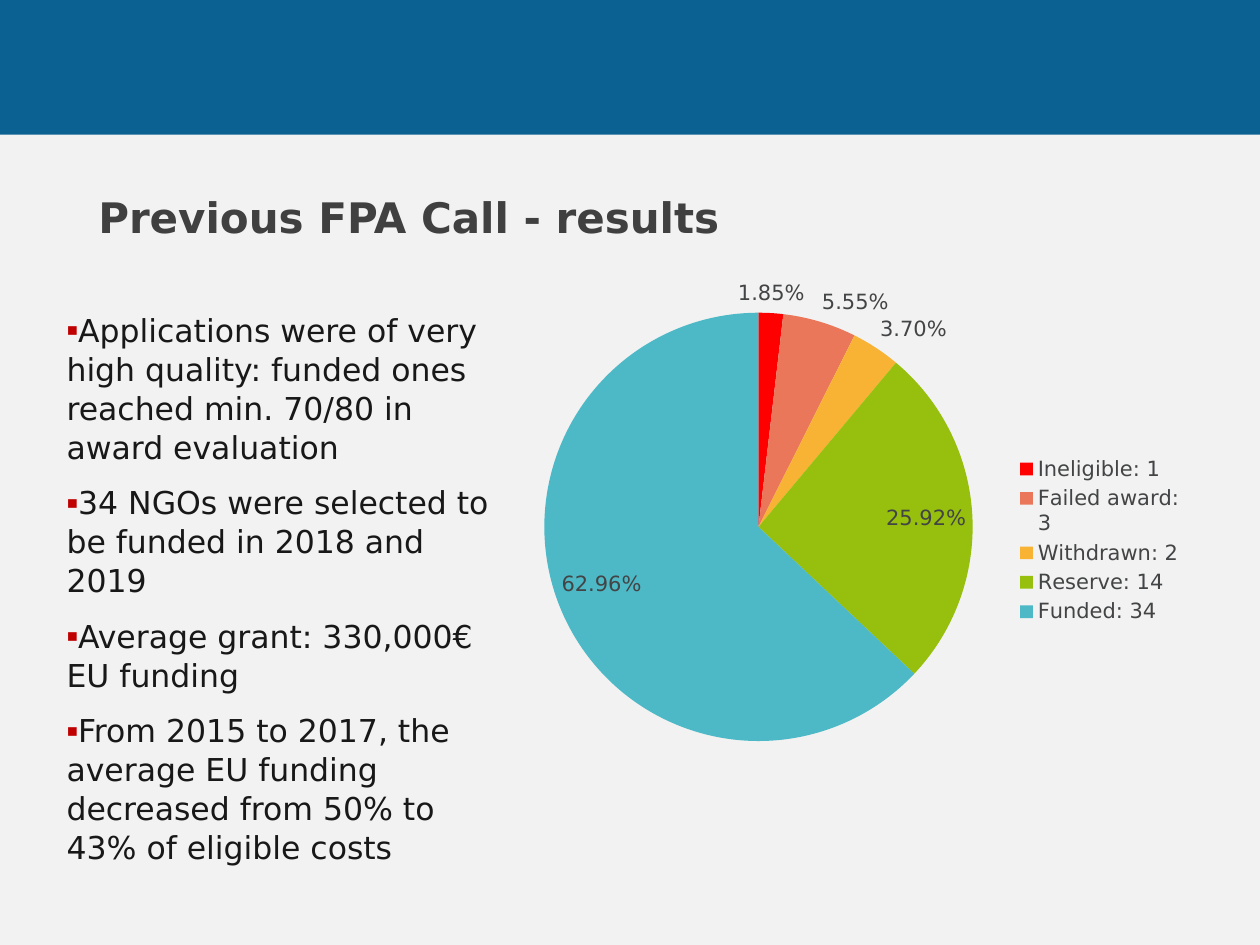
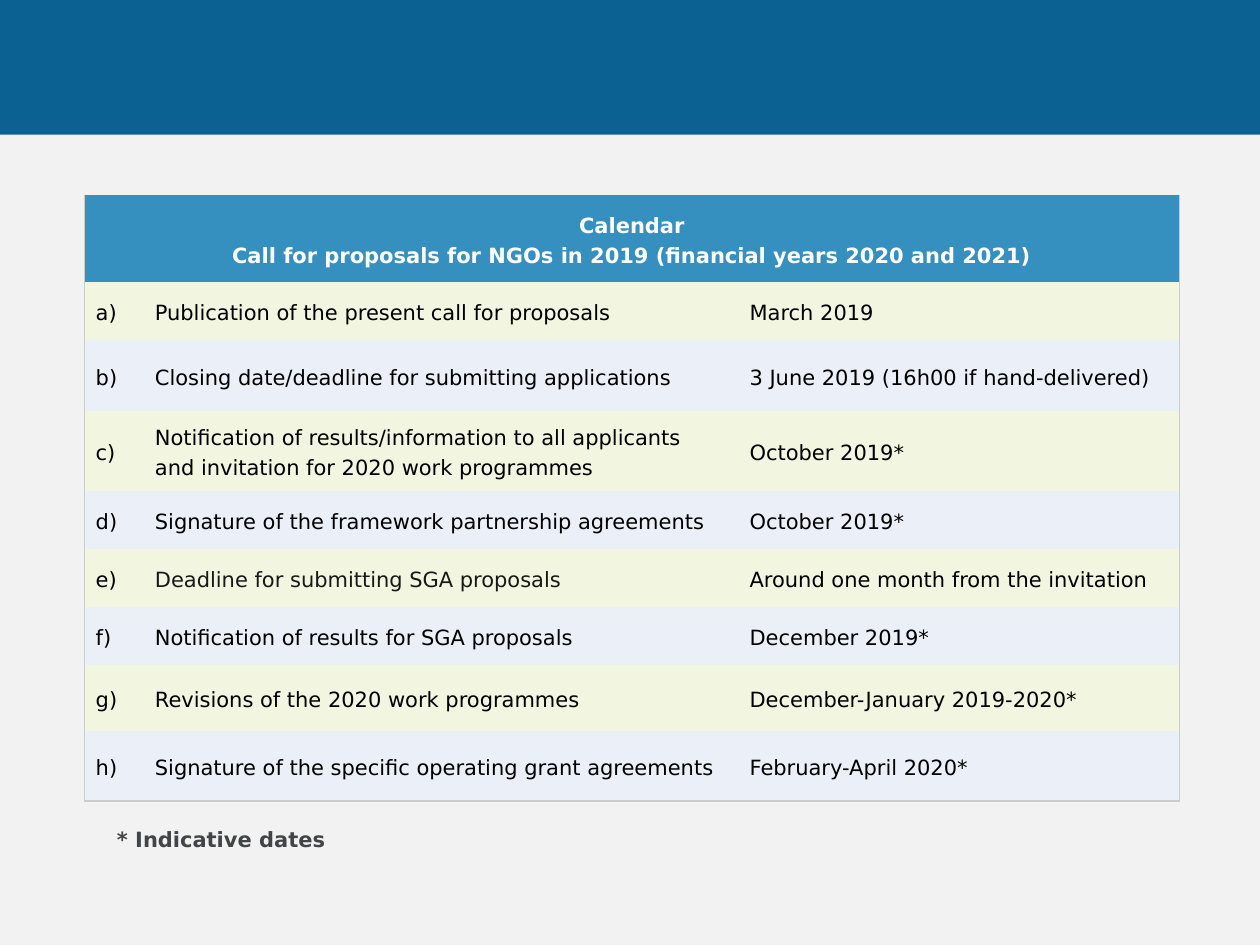
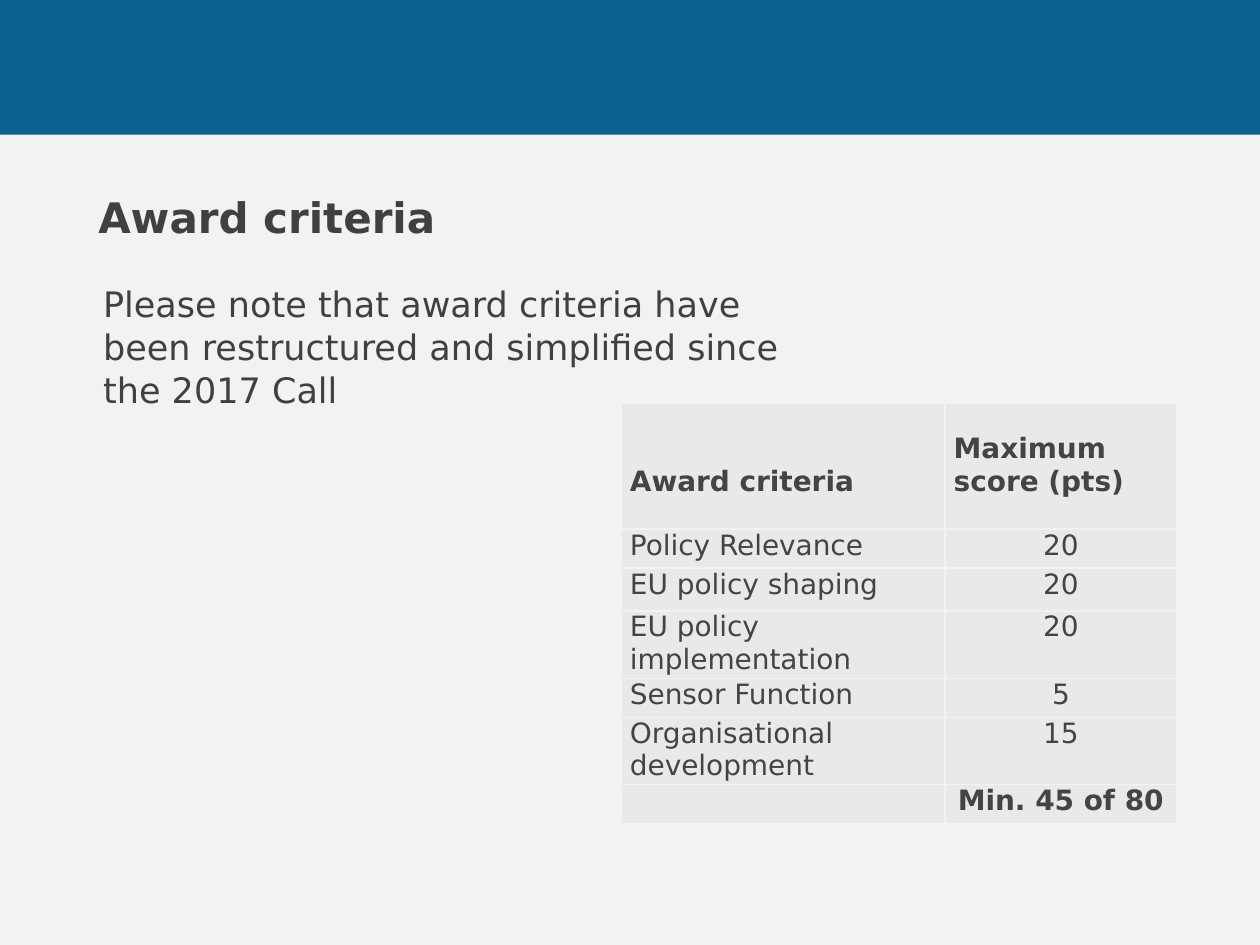
from lxml import etree
from pptx import Presentation
from pptx import util as u
from pptx.chart.data import CategoryChartData
from pptx.dml.color import RGBColor
from pptx.enum import chart as ch, shapes, text
from pptx.oxml import ns

FACE = "DejaVu Sans"
PAPER, BAND, INK, DARK, GREY = "F2F2F2", "0B6192", "404040", "181818", "434445"
HEAD, GREEN, PALE, CELL, EDGE = "3590BF", "F2F5E0", "EBEFF8", "E9E9E9", "CCCCCC"
PLAIN = "{2D5ABB26-0587-4C30-8999-92F81FD0307C}"
LEFT, MID = text.PP_ALIGN.LEFT, text.PP_ALIGN.CENTER
TOP, HALF, BASE = text.MSO_ANCHOR.TOP, text.MSO_ANCHOR.MIDDLE, text.MSO_ANCHOR.BOTTOM


def rgb(code):
    return RGBColor.from_string(code)


def paint(item, code):
    item.fill.solid()
    item.fill.fore_color.rgb = rgb(code)


def add(up, tag, **attrs):
    return etree.SubElement(up, ns.qn(tag), attrs)


def bullet(para, mark, code):
    props = para._p.get_or_add_pPr()
    props.set("marL", "0")
    props.set("indent", "0")
    add(add(props, "a:buClr"), "a:srgbClr", val=code)
    add(props, "a:buSzPct", val="55000")
    add(props, "a:buFont", typeface=FACE)
    add(props, "a:buChar", char=mark)


def write(frame, lines, size=12, code=GREY, bold=False, align=LEFT,
          lead=None, before=0, after=0, mark=None):
    lines = [lines] if isinstance(lines, str) else lines
    for i, line in enumerate(lines):
        para = frame.add_paragraph() if i else frame.paragraphs[0]
        para.text = line
        para.alignment = align
        para.line_spacing = lead
        para.space_before = u.Pt(before if i else 0)
        para.space_after = u.Pt(after)
        if mark:
            bullet(para, mark, "C00000")
        for run in para.runs:
            font = run.font
            font.name, font.size, font.bold = FACE, u.Pt(size), bold
            font.color.rgb = rgb(code)


def border(cell, sides, code):
    props = cell._tc.get_or_add_tcPr()
    for i, side in enumerate(sides):
        line = etree.Element(ns.qn("a:ln" + side), w=str(u.Pt(1)))
        add(add(line, "a:solidFill"), "a:srgbClr", val=code)
        props.insert(i, line)


def place(item, x, y, w, h):
    layout = item.find(ns.qn("c:layout"))
    if layout is None:
        layout = etree.Element(ns.qn("c:layout"))
        item.insert(1 if item.tag == ns.qn("c:legend") else 0, layout)
    for child in list(layout):
        layout.remove(child)
    manual = add(layout, "c:manualLayout")
    if item.tag == ns.qn("c:plotArea"):
        add(manual, "c:layoutTarget", val="inner")
    add(manual, "c:xMode", val="edge")
    add(manual, "c:yMode", val="edge")
    for key, val in zip("xywh", (x, y, w, h)):
        add(manual, "c:" + key, val=str(val))


class Deck:
    def __init__(self):
        self.prs = Presentation()
        self.prs.slide_width = u.Inches(10)
        self.prs.slide_height = u.Inches(7.5)
        paint(self.prs.slide_master.background, PAPER)

    def page(self, title=None):
        layout = self.prs.slide_layouts[5 if title else 6]
        self.slide = self.prs.slides.add_slide(layout)
        self.band()
        if title:
            self.title(title)

    def band(self):
        band = self.slide.shapes.add_shape(
            shapes.MSO_SHAPE.RECTANGLE, 0, 0, u.Inches(10), u.Inches(1.07))
        band.shadow.inherit = False
        paint(band, BAND)
        band.line.fill.background()
        self.slide.shapes._spTree.insert(2, band._element)

    def title(self, words):
        head = self.slide.shapes.title
        head.left, head.top = u.Inches(0.68), u.Inches(1.47)
        head.width, head.height = u.Inches(8.67), u.Inches(1.02)
        frame = head.text_frame
        frame.auto_size = text.MSO_AUTO_SIZE.NONE
        frame.vertical_anchor = TOP
        write(frame, words, size=24, code=INK, bold=True)

    def note(self, x, y, w, h, lines, **style):
        box = self.slide.shapes.add_textbox(*map(u.Inches, (x, y, w, h)))
        box.text_frame.word_wrap = True
        write(box.text_frame, lines, **style)

    def table(self, x, y, cols, rows):
        spot = map(u.Inches, (x, y, sum(cols), sum(rows)))
        grid = self.slide.shapes.add_table(len(rows), len(cols), *spot).table
        grid.first_row = grid.horz_banding = False
        grid._tbl.tblPr.find(ns.qn("a:tableStyleId")).text = PLAIN
        for col, wide in zip(grid.columns, cols):
            col.width = u.Inches(wide)
        for row, high in zip(grid.rows, rows):
            row.height = u.Inches(high)
        return grid

    def cell(self, cell, words, fill, sides, edge, pad, foot=None,
             anchor=TOP, **style):
        cell.margin_left = cell.margin_right = u.Inches(pad[0])
        cell.margin_top = u.Inches(pad[1])
        cell.margin_bottom = u.Inches(pad[1] if foot is None else foot)
        cell.vertical_anchor = anchor
        write(cell.text_frame, words, **style)
        paint(cell, fill)
        border(cell, sides, edge)

    def pie(self, x, y, w, h, parts):
        data = CategoryChartData(number_format="0.00%")
        data.categories = [name for name, _, _ in parts]
        data.add_series("Series 1", [val for _, val, _ in parts])
        chart = self.slide.shapes.add_chart(
            ch.XL_CHART_TYPE.PIE, *map(u.Inches, (x, y, w, h)), data).chart
        chart.has_title = False
        chart.has_legend = True
        legend = chart.legend
        legend.position = ch.XL_LEGEND_POSITION.RIGHT
        legend.include_in_layout = False
        plot = chart.plots[0]
        plot.vary_by_categories = True
        plot.has_data_labels = True
        tags = plot.data_labels
        tags.show_value, tags.show_percentage = True, False
        tags.number_format, tags.number_format_is_linked = "0.00%", False
        tags.position = ch.XL_LABEL_POSITION.BEST_FIT
        for font, size in (chart.font, 10), (legend.font, 12), (tags.font, 12):
            font.name, font.size = FACE, u.Pt(size)
            font.color.rgb = rgb(GREY)
        for i, (_, _, code) in enumerate(parts):
            paint(plot.series[0].points[i].format, code)
        place(chart._chartSpace.chart.plotArea, 0.13, 0.09, 0.54, 0.8)
        place(legend._element, 0.72, 0.35, 0.22, 0.33)


def results(deck):
    deck.page("Previous FPA Call - results")
    deck.note(0.43, 2.41, 3.62, 4.17, [
        "Applications were of very high quality: funded ones reached min. 70/80 in award evaluation",
        "34 NGOs were selected to be funded in 2018 and 2019",
        "Average grant: 330,000€ EU funding",
        "From 2015 to 2017, the average EU funding decreased from 50% to 43% of eligible costs",
    ], size=18, code=DARK, lead=1.03, before=3.6, after=6, mark="▪")
    deck.pie(3.5, 2.1, 6.3, 4.25, [
        ("Ineligible: 1", 0.0185, "FF0000"),
        ("Failed award: 3", 0.0555, "EB775B"),
        ("Withdrawn: 2", 0.037, "F8B334"),
        ("Reserve: 14", 0.2592, "97BF0D"),
        ("Funded: 34", 0.6296, "4DB9C7"),
    ])


def dates(deck):
    deck.page()
    steps = [
        ("Publication of the present call for proposals", "March 2019"),
        ("Closing date/deadline for submitting applications",
         "3 June 2019 (16h00 if hand-delivered)"),
        ("Notification of results/information to all applicants and invitation for 2020 work programmes",
         "October 2019*"),
        ("Signature of the framework partnership agreements", "October 2019*"),
        ("Deadline for submitting SGA proposals", "Around one month from the invitation"),
        ("Notification of results for SGA proposals", "December 2019*"),
        ("Revisions of the 2020 work programmes", "December-January 2019-2020*"),
        ("Signature of the specific operating grant agreements", "February-April 2020*"),
    ]
    grid = deck.table(0.67, 1.55, [0.47, 4.72, 3.5],
                      [0.69, 0.46, 0.56, 0.64, 0.46, 0.46, 0.46, 0.52, 0.56])
    look = dict(edge=EDGE, pad=(0.09, 0.08), anchor=HALF, lead=1.2)
    grid.cell(0, 0).merge(grid.cell(0, 2))
    deck.cell(grid.cell(0, 0),
              "Calendar\vCall for proposals for NGOs in 2019 (financial years 2020 and 2021)",
              HEAD, "LR", code="FFFFFF", bold=True, align=MID, **look)
    for r, (mark, step) in enumerate(zip("abcdefgh", steps), 1):
        base = "B" if r == len(steps) else ""
        for c, words in enumerate((mark + ")", *step)):
            code = DARK if (mark, c) == ("e", 1) else "000000"
            deck.cell(grid.cell(r, c), words, GREEN if r % 2 else PALE,
                      ("L", "", "R")[c] + base, code=code, **look)
    deck.note(0.83, 6.51, 3.78, 0.32, "* Indicative dates", bold=True)


def awards(deck):
    deck.page("Award criteria")
    deck.note(0.72, 2.18, 5.86, 0.79,
              "Please note that award criteria have been restructured and simplified since the 2017 Call",
              size=20, code=INK, lead=1.03)
    rows = [
        ("Award criteria", "Maximum score (pts)"),
        ("Policy Relevance", "20"),
        ("EU policy shaping", "20"),
        ("EU policy implementation", "20"),
        ("Sensor Function", "5"),
        ("Organisational development", "15"),
        ("", "Min. 45 of 80"),
    ]
    grid = deck.table(4.93, 3.2, [2.57, 1.84], [1, 0.31, 0.34, 0.51, 0.31, 0.51, 0.31])
    for r, row in enumerate(rows):
        first = r == 0
        for c, words in enumerate(row):
            deck.cell(grid.cell(r, c), words, CELL, "LRTB", PAPER, (0.07, 0),
                      foot=0.25 if first else 0, anchor=BASE if first else TOP,
                      size=16, bold=r in (0, len(rows) - 1),
                      align=MID if c and not first else LEFT)


def main():
    deck = Deck()
    results(deck)
    dates(deck)
    awards(deck)
    deck.prs.save("out.pptx")


if __name__ == "__main__":
    main()
